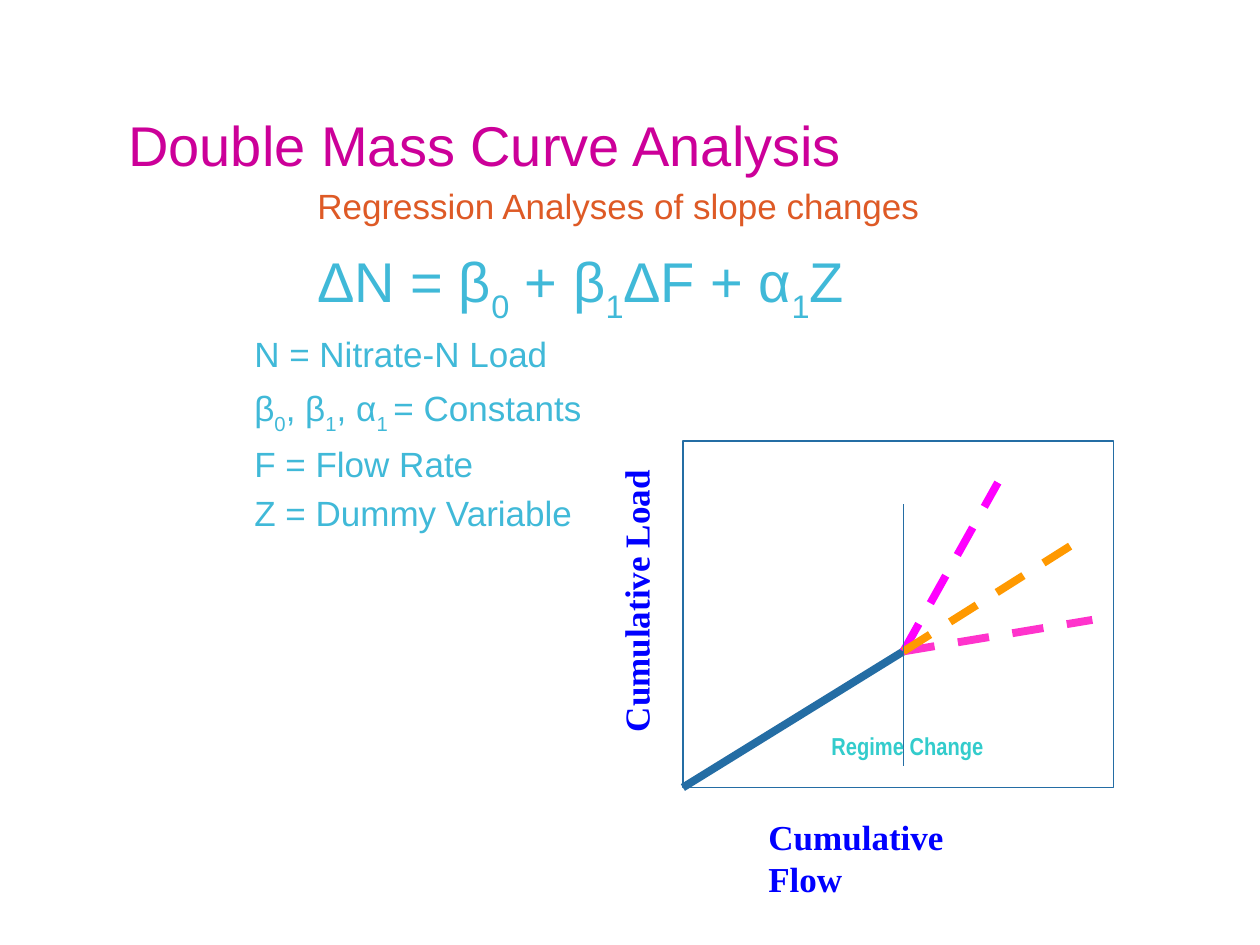
from pptx import Presentation
from pptx.dml.color import RGBColor
from pptx.enum.dml import MSO_LINE
from pptx.enum.shapes import MSO_CONNECTOR, MSO_SHAPE
from pptx.enum.text import MSO_AUTO_SIZE
from pptx.oxml.ns import qn
from pptx.util import Inches, Pt
from lxml.etree import SubElement

BLUE, CYAN = "246DA4", "40B9D8"
ORIGIN, BREAK = (5.42, 6.25), (7.17, 5.17)
FORMULA = ["ΔN = β", "0", " + β", "1", "ΔF + α", "1", "Z"]
CONSTANTS = ["β", "0", ", β", "1", ", α", "1 ", "= Constants"]
BODY = [
    (["Double Mass Curve Analysis"], 32, "CC0099", 0, 1),
    (["Regression Analyses of slope changes"], 20, "DE5A26", 1.5, 1),
    (FORMULA, 32, CYAN, 1.5, 1.1),
    (["N = Nitrate-N Load"], 20, CYAN, 1, 1),
    (CONSTANTS, 20, CYAN, 1, 1.1),
    (["F = Flow Rate"], 20, CYAN, 1, 1),
    (["Z = Dummy Variable"], 20, CYAN, 1, 1),
]
FORECASTS = [((7.92, 3.83), "FF00FF"), ((8.67, 4.92), "FF33CC"), ((8.5, 4.33), "FF9900")]


def rgb(value):
    """Return the colour for a hex string."""
    return RGBColor.from_string(value)


def add_run(p, text, size, color, font="Arial", bold=False, subscript=False):
    """Append one formatted run to a paragraph."""
    r = p.add_run()
    r.text = text
    r.font.size, r.font.name, r.font.bold = Pt(size), font, bold
    r.font.color.rgb = rgb(color)
    if subscript:
        r.font._element.set("baseline", "-30000")


def add_box(s, left, top, width, height, wrap):
    """Add an empty text box and return it."""
    sp = s.shapes.add_textbox(Inches(left), Inches(top), Inches(width), Inches(height))
    sp.text_frame.word_wrap = wrap
    return sp


def add_body(s):
    """Add the title, the formula and its terms, with every second run a subscript."""
    tf = add_box(s, 0.92, 0.83, 8.5, 4.5, True).text_frame
    for i, (parts, size, color, indent, spacing) in enumerate(BODY):
        p = tf.add_paragraph() if i else tf.paragraphs[0]
        p.line_spacing = spacing
        pPr = p._p.get_or_add_pPr()
        pPr.set("marL", str(Inches(indent)))
        before = SubElement(pPr, qn("a:spcBef"))
        SubElement(before, qn("a:spcPct")).set("val", "20000")
        for j, part in enumerate(parts):
            add_run(p, part, size, color, subscript=j % 2 == 1)


def add_label(s, text, at, size, color, font, wrap=False, rotation=0):
    """Add a bold chart label."""
    sp = add_box(s, *at, wrap)
    sp.rotation = rotation
    sp.text_frame.auto_size = MSO_AUTO_SIZE.SHAPE_TO_FIT_TEXT
    add_run(sp.text_frame.paragraphs[0], text, size, color, font, bold=True)


def add_line(s, start, end, color, width=4.5, dashed=False):
    """Add a straight line without shadow."""
    points = [Inches(v) for v in (*start, *end)]
    line = s.shapes.add_connector(MSO_CONNECTOR.STRAIGHT, *points)
    line.line.color.rgb = rgb(color)
    line.line.width = Pt(width)
    if dashed:
        line.line.dash_style = MSO_LINE.DASH
    SubElement(line._element.spPr, qn("a:effectLst"))


def add_frame(s, left, top, width, height):
    """Add the unfilled plot frame."""
    sp = s.shapes.add_shape(
        MSO_SHAPE.RECTANGLE, Inches(left), Inches(top), Inches(width), Inches(height))
    sp.shadow.inherit = False
    sp.fill.background()
    sp.line.color.rgb = rgb(BLUE)
    sp.line.width = Pt(0.75)


def main():
    """Build and save the slide."""
    prs = Presentation()
    prs.slide_width, prs.slide_height = Inches(10), Inches(7.5)
    s = prs.slides.add_slide(prs.slide_layouts[6])
    add_body(s)
    add_frame(s, 5.42, 3.5, 3.42, 2.75)
    add_line(s, ORIGIN, BREAK, BLUE)
    for end, color in FORECASTS:
        add_line(s, BREAK, end, color, dashed=True)
    serif = "Times New Roman"
    add_label(s, "Cumulative Load", (3.88, 4.53, 2.33, 0.43), 20, "0000FF", serif, rotation=270)
    add_label(s, "Cumulative Flow", (6, 6.42, 2.2, 0.43), 20, "0000FF", serif, wrap=True)
    add_line(s, (BREAK[0], 4), (BREAK[0], 6.08), BLUE, 0.75)
    add_label(s, "Regime Change", (6.5, 5.75, 1.41, 0.33), 14, "33CCCC", "Arial Narrow")
    prs.save("out.pptx")


if __name__ == "__main__":
    main()
